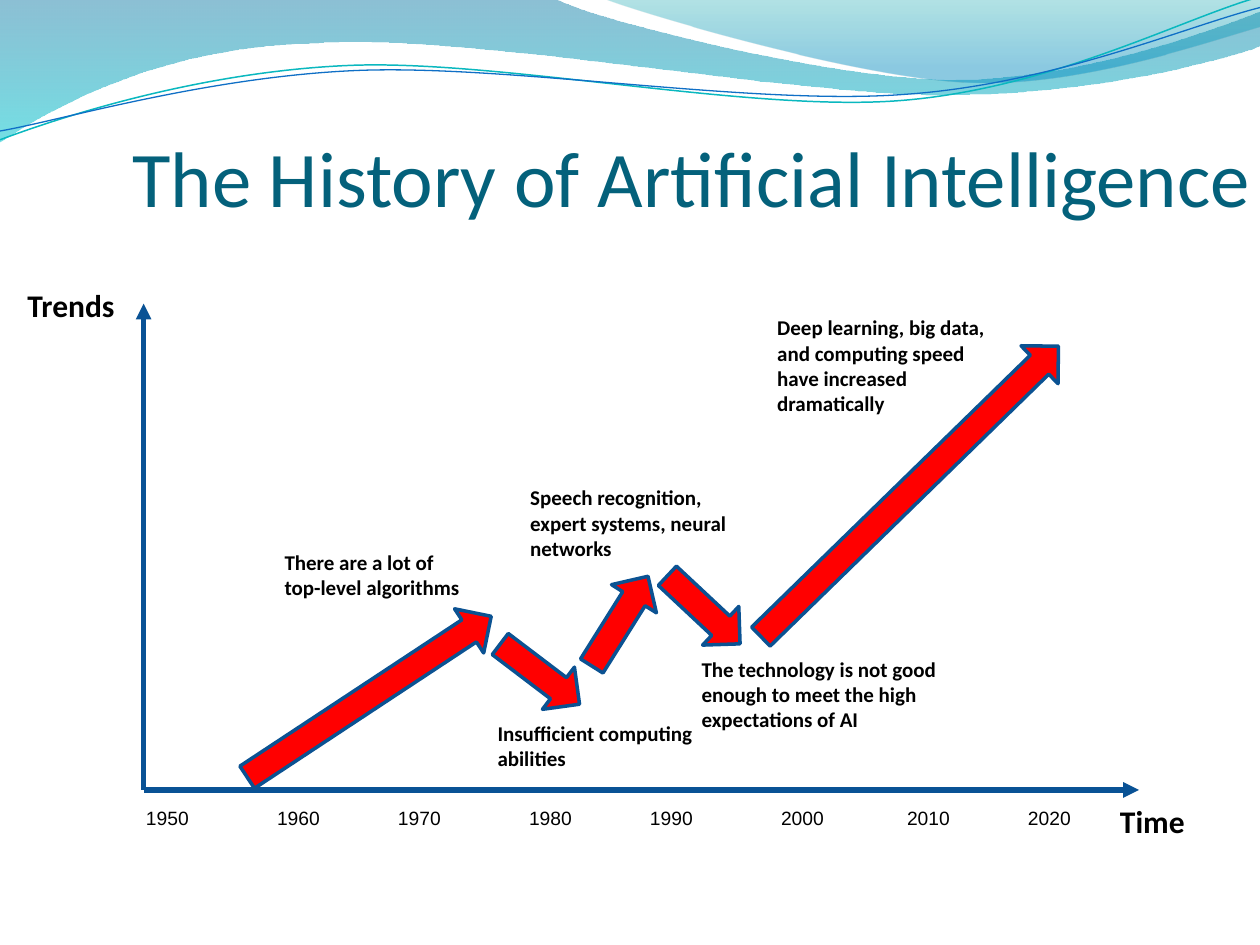
"""Build a slide charting the trends in the history of artificial intelligence."""
from lxml.etree import SubElement
from pptx import Presentation
from pptx.dml.color import RGBColor
from pptx.enum.shapes import MSO_CONNECTOR as Connector, MSO_SHAPE as Shape
from pptx.enum.text import MSO_ANCHOR as Anchor
from pptx.oxml.ns import qn
from pptx.util import Inches, Pt

TITLE = "The History of Artificial Intelligence"
YEARS = [str(year) for year in range(1950, 2021, 10)]
YEAR_TABS = [1.04, 2, 3.04, 4, 5.04, 6.04, 7]
AXIS_NAMES = [("Trends", 0.12, 2.22, 1.0, 0.4), ("Time", 8.79, 6.32, 1.02, 0.4)]
NOTES = [
    ("There are a lot of\ntop-level algorithms", 2.16, 4.31, 1.95, 0.51),
    ("Insufficient computing abilities", 3.85, 5.67, 1.95, 0.51),
    ("The technology is not good enough to meet the high expectations of AI",
     5.47, 5.16, 2.17, 0.71),
    ("Speech recognition, expert systems, neural networks", 4.11, 3.8, 1.95, 0.71),
    ("Deep learning, big data, and computing speed have increased dramatically",
     6.07, 2.45, 1.95, 0.91),
]
TREND_THICKNESS = 0.42
TRENDS = [
    (1.77, 5.32, 2.32, 326.6),
    (3.89, 5.14, 0.79, 37.2),
    (4.5, 4.72, 0.84, 302.1),
    (5.19, 4.63, 0.79, 43.1),
    (5.57, 3.69, 3.3, 315.7),
]
ORIGIN = (1.14, 6.27)
AXIS_TIPS = [(1.14, 2.41), (9.04, 6.27)]
BANDS = [
    ([(0, 0), (4.4, -0.01),
      (4.76, 0.17, 6.64, 0.63, 7.58, 0.63), (8.53, 0.63, 9.58, 0.26, 10, 0.09),
      (10.01, 0.36),
      (9.83, 0.44, 8.7, 0.76, 7.46, 0.75), (6.22, 0.75, 3.82, 0.28, 2.57, 0.34),
      (1.29, 0.36, 0.46, 0.83, -0.01, 1.13), (0, 0)],
     [(0, "0074A1", 45), (1, "00C6CF", 55)]),
    ([(4.79, -0.01),
      (5.09, 0.11, 6.82, 0.62, 7.69, 0.65), (8.56, 0.69, 9.61, 0.32, 10, 0.21),
      (10, 0), (4.79, -0.01)],
     [(0, "00A1A9", 30), (0.8, "008BBF", 45)]),
]
WAVES = [
    ([(0, 1.11), (0.48, 0.93, 1.58, 0.57, 2.77, 0.52),
      (3.95, 0.47, 5.93, 0.89, 7.13, 0.8), (8.33, 0.71, 9.38, 0.15, 9.98, -0.02)],
     "0AB8BF", 0.85),
    ([(0, 1.04), (0.47, 0.96, 1.64, 0.61, 2.83, 0.56),
      (4.03, 0.51, 5.97, 0.84, 7.17, 0.75), (8.36, 0.67, 9.41, 0.21, 10, 0.06)],
     "0F6FC6", 0.75),
]


def rgb(value):
    return RGBColor.from_string(value)


def set_line(line, color, width):
    line.color.rgb = rgb(color)
    line.width = Pt(width)


def add_outline(shapes, moves, close):
    """Join the end points of the moves, then bend the cubic ones."""
    corners = [(Inches(move[-2]), Inches(move[-1])) for move in moves]
    builder = shapes.build_freeform(*corners[0])
    builder.add_line_segments(corners[1:], close=close)
    outline = builder.convert_to_shape()
    outline.shadow.inherit = False
    segments = list(outline.element.spPr.iter(qn("a:lnTo")))
    for segment, move in zip(segments, moves[1:]):
        if len(move) == 2:
            continue
        curve = segment.makeelement(qn("a:cubicBezTo"))
        for x, y in zip(move[::2], move[1::2]):
            SubElement(curve, qn("a:pt"), x=str(Inches(x) - outline.left),
                       y=str(Inches(y) - outline.top))
        segment.getparent().replace(segment, curve)
    return outline


def add_band(shapes, moves, stops):
    band = add_outline(shapes, moves, True)
    band.line.fill.background()
    band.fill.gradient()
    band.fill.gradient_angle = 270
    for stop, (position, color, _) in zip(band.fill.gradient_stops, stops):
        stop.position = position
        stop.color.rgb = rgb(color)
    for tint, (_, _, opacity) in zip(band.element.spPr.iter(qn("a:srgbClr")), stops):
        SubElement(tint, qn("a:alpha"), val=str(opacity * 1000))


def add_wave(shapes, moves, color, width):
    wave = add_outline(shapes, moves, False)
    wave.fill.background()
    set_line(wave.line, color, width)


def add_text(shapes, text, left, top, width, height, size,
             font="Calibri", color="000000", bold=False):
    frame = shapes.add_textbox(*map(Inches, (left, top, width, height))).text_frame
    frame.word_wrap = True
    frame.text = text
    for paragraph in frame.paragraphs:
        paragraph.font.size = Pt(size)
        paragraph.font.name = font
        paragraph.font.bold = bold
        paragraph.font.color.rgb = rgb(color)
    return frame


def add_years(shapes):
    frame = add_text(shapes, "\t".join(YEARS), 1.06, 6.35, 8.69, 0.29, 11, font="Arial")
    properties = frame.paragraphs[0]._p.get_or_add_pPr()
    tabs = properties.makeelement(qn("a:tabLst"))
    properties.insert(0, tabs)
    for position in YEAR_TABS:
        SubElement(tabs, qn("a:tab"), pos=str(Inches(position)), algn="l")


def add_axis(shapes, tip):
    axis = shapes.add_connector(Connector.STRAIGHT, *map(Inches, tip + ORIGIN))
    set_line(axis.line, "095295", 3)
    SubElement(axis.line._get_or_add_ln(), qn("a:headEnd"), type="triangle")
    SubElement(axis._element.spPr, qn("a:effectLst"))


def add_trend(shapes, left, top, length, angle):
    trend = shapes.add_shape(
        Shape.RIGHT_ARROW, *map(Inches, (left, top, length, TREND_THICKNESS)))
    trend.rotation = angle
    trend.shadow.inherit = False
    trend.fill.solid()
    trend.fill.fore_color.rgb = rgb("FF0000")
    set_line(trend.line, "0B5292", 2)


def main():
    deck = Presentation()
    deck.slide_width, deck.slide_height = Inches(10), Inches(7.5)
    shapes = deck.slides.add_slide(deck.slide_layouts[6]).shapes
    for band in BANDS:
        add_band(shapes, *band)
    for wave in WAVES:
        add_wave(shapes, *wave)

    title = add_text(shapes, TITLE, 1.05, 0.52, 8.95, 1.25, 45, color="04617B")
    title.vertical_anchor = Anchor.BOTTOM
    title.margin_left = title.margin_right = title.margin_bottom = 0

    for tip in AXIS_TIPS:
        add_axis(shapes, tip)
    add_years(shapes)
    for name in AXIS_NAMES:
        add_text(shapes, *name, 18, bold=True)
    for note in NOTES:
        add_text(shapes, *note, 12, bold=True)
    for trend in TRENDS:
        add_trend(shapes, *trend)
    deck.save("out.pptx")


if __name__ == "__main__":
    main()
